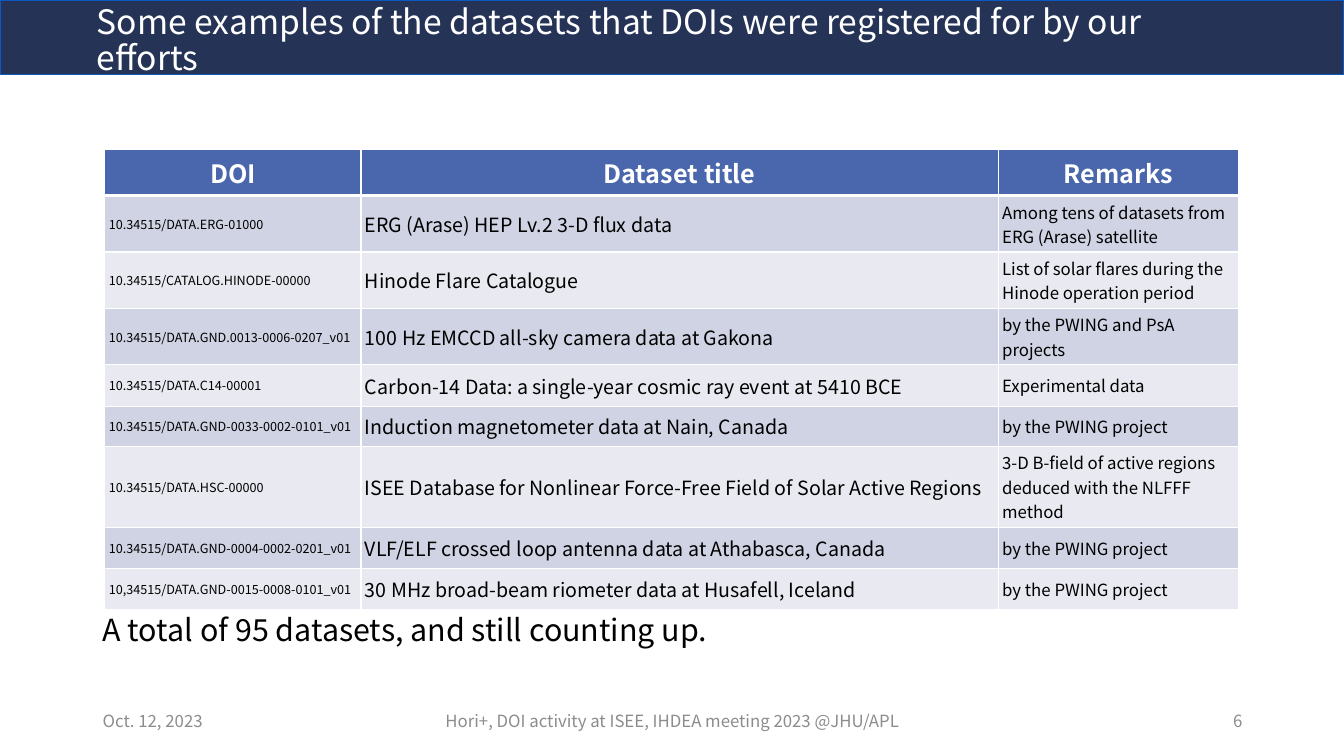
from lxml.etree import SubElement
from pptx import Presentation
from pptx.dml.color import RGBColor
from pptx.enum.shapes import MSO_SHAPE
from pptx.enum.text import MSO_ANCHOR, PP_ALIGN
from pptx.oxml.ns import qn
from pptx.util import Emu, Pt

PX = 9144  # 100 px to the inch
FONT = "Noto Sans CJK JP"
COLORS = {
    "banner": "253356", "banner_line": "0E58C4", "header": "4A66AC",
    "odd_row": "D0D3E3", "even_row": "E9EAF1",
    "white": "FFFFFF", "black": "000000", "grey": "8C8C8C",
}
HEADINGS = ("DOI", "Dataset title", "Remarks")
DATASETS = [
    ("10.34515/DATA.ERG-01000", "ERG (Arase) HEP Lv.2 3-D flux data",
     "Among tens of datasets from ERG (Arase) satellite"),
    ("10.34515/CATALOG.HINODE-00000", "Hinode Flare Catalogue",
     "List of solar flares during the Hinode operation period"),
    ("10.34515/DATA.GND.0013-0006-0207_v01", "100 Hz EMCCD all-sky camera data at Gakona",
     "by the PWING and PsA projects"),
    ("10.34515/DATA.C14-00001", "Carbon-14 Data: a single-year cosmic ray event at 5410 BCE",
     "Experimental data"),
    ("10.34515/DATA.GND-0033-0002-0101_v01", "Induction magnetometer data at Nain, Canada",
     "by the PWING project"),
    ("10.34515/DATA.HSC-00000",
     "ISEE Database for Nonlinear Force-Free Field of Solar Active Regions",
     "3-D B-field of active regions deduced with the NLFFF method"),
    ("10.34515/DATA.GND-0004-0002-0201_v01",
     "VLF/ELF crossed loop antenna data at Athabasca, Canada", "by the PWING project"),
    ("10,34515/DATA.GND-0015-0008-0101_v01",
     "30 MHz broad-beam riometer data at Husafell, Iceland", "by the PWING project"),
]
COLUMN_WIDTHS = (254, 632, 239)
COLUMN_SIZES = (9, 14, 12)
ROW_HEIGHTS = (46, 56, 56, 56, 41, 40, 80, 41, 41)


def px(length):
    return Emu(length * PX)


def color(name):
    return RGBColor.from_string(COLORS[name])


def set_text(text_frame, text, size, color_name, align=PP_ALIGN.LEFT, bold=False):
    text_frame.text = text
    paragraph = text_frame.paragraphs[0]
    paragraph.alignment = align
    font = paragraph.runs[0].font
    font.name, font.size, font.bold = FONT, Pt(size), bold
    font.color.rgb = color(color_name)
    return paragraph


def set_margins(target, left, top, right, bottom):
    target.margin_left, target.margin_top = px(left), px(top)
    target.margin_right, target.margin_bottom = px(right), px(bottom)


def add_text(slide, box, text, size, color_name, align=PP_ALIGN.LEFT,
             anchor=MSO_ANCHOR.MIDDLE, margins=(10, 5, 10, 5), line_spacing=1.0):
    text_frame = slide.shapes.add_textbox(*map(px, box)).text_frame
    text_frame.word_wrap = True
    text_frame.vertical_anchor = anchor
    set_margins(text_frame, *margins)
    set_text(text_frame, text, size, color_name, align).line_spacing = line_spacing


def add_banner(slide, box, title):
    left, top, width, height = box
    banner = slide.shapes.add_shape(MSO_SHAPE.RECTANGLE, *map(px, box))
    banner.shadow.inherit = False
    banner.fill.solid()
    banner.fill.fore_color.rgb = color("banner")
    banner.line.color.rgb = color("banner_line")
    banner.line.width = Pt(1)
    add_text(slide, (left + 92, top + 1, width - 183, height - 1), title, 24, "white",
             margins=(4, 12, 4, 5), line_spacing=0.9)


def add_borders(cell, top, bottom):
    """Draw white borders; top and bottom are widths in points."""
    properties = cell._tc.get_or_add_tcPr()
    for side, width in (("L", 1), ("R", 1), ("T", top), ("B", bottom)):
        line = SubElement(properties, qn(f"a:ln{side}"), w=str(Pt(width)))
        fill = SubElement(line, qn("a:solidFill"))
        SubElement(fill, qn("a:srgbClr"), val=COLORS["white"])


def fill_cell(cell, fill_name, top=1, bottom=1):
    add_borders(cell, top, bottom)
    cell.fill.solid()
    cell.fill.fore_color.rgb = color(fill_name)


def add_dataset_table(slide, left, top):
    table = slide.shapes.add_table(
        len(ROW_HEIGHTS), len(HEADINGS), px(left), px(top),
        px(sum(COLUMN_WIDTHS)), px(sum(ROW_HEIGHTS))).table
    for column, width in zip(table.columns, COLUMN_WIDTHS):
        column.width = px(width)
    for row, height in zip(table.rows, ROW_HEIGHTS):
        row.height = px(height)
    for column, heading in enumerate(HEADINGS):
        cell = table.cell(0, column)
        set_text(cell.text_frame, heading, 18, "white", PP_ALIGN.CENTER, bold=True)
        fill_cell(cell, "header", bottom=3)
    for row, dataset in enumerate(DATASETS, start=1):
        for column, (text, size) in enumerate(zip(dataset, COLUMN_SIZES)):
            cell = table.cell(row, column)
            set_text(cell.text_frame, text, size, "black")
            cell.vertical_anchor = MSO_ANCHOR.MIDDLE
            set_margins(cell, 4, 4, 4, 4)
            fill_cell(cell, "odd_row" if row % 2 else "even_row", top=3 if row == 1 else 1)


def add_footer(slide, box):
    left, top, width, height = box
    side = 141
    parts = [
        ("Oct. 12, 2023", 0, side, PP_ALIGN.LEFT),
        ("Hori+, DOI activity at ISEE, IHDEA meeting 2023 @JHU/APL",
         side, width - 2 * side, PP_ALIGN.CENTER),
        ("6", width - side, side, PP_ALIGN.RIGHT),
    ]
    for text, offset, part_width, align in parts:
        add_text(slide, (left + offset, top, part_width, height), text, 12, "grey", align)


def main():
    presentation = Presentation()
    presentation.slide_width, presentation.slide_height = px(1333), px(750)
    slide = presentation.slides.add_slide(presentation.slide_layouts[6])
    add_banner(slide, (0, 0, 1333, 74),
               "Some examples of the datasets that DOIs were registered for by our efforts")
    add_text(slide, (92, 608, 1150, 40), "A total of 95 datasets, and still counting up.",
             21.7, "black", anchor=MSO_ANCHOR.TOP, line_spacing=0.8)
    add_footer(slide, (92, 695, 1150, 40))
    add_dataset_table(slide, 104, 148)
    presentation.save("out.pptx")


if __name__ == "__main__":
    main()
